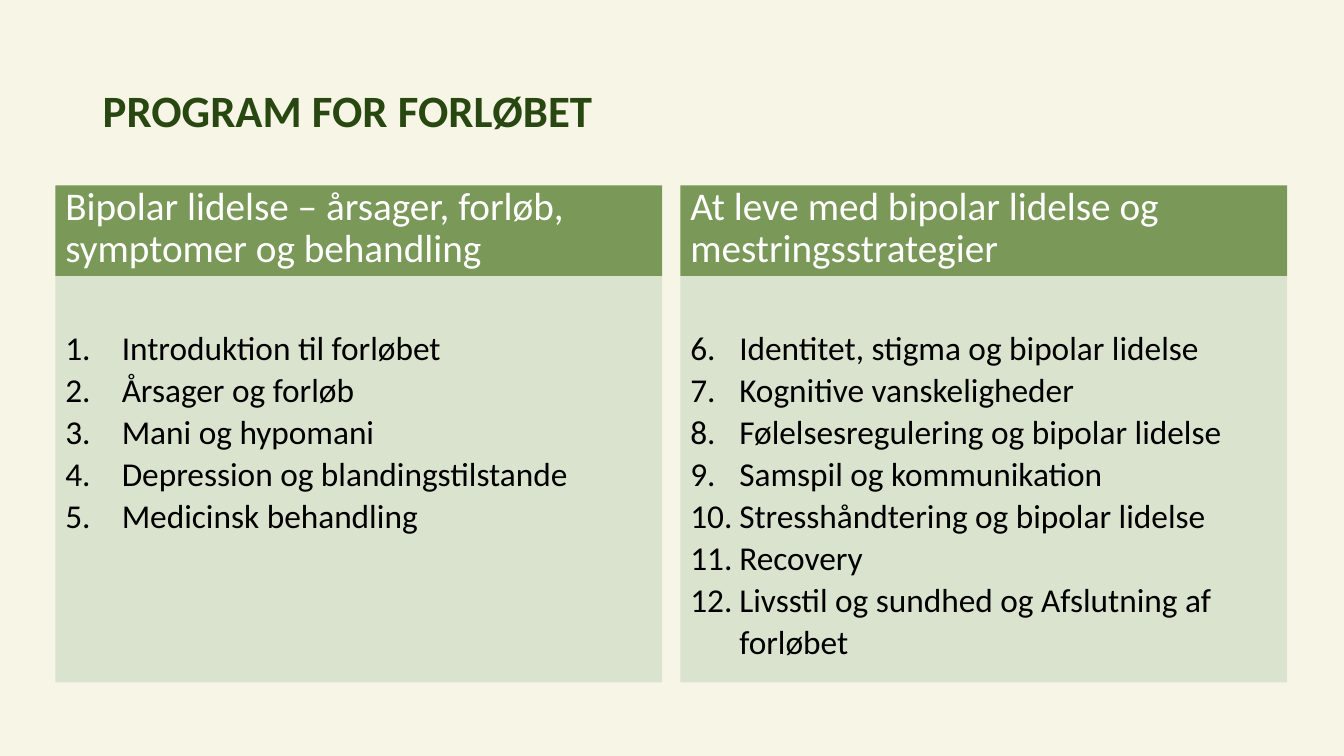
from dataclasses import dataclass

from lxml import etree
from pptx import Presentation
from pptx.dml.color import RGBColor
from pptx.enum import shapes, text
from pptx.oxml import ns
from pptx.util import Pt


@dataclass(frozen=True)
class Theme:
    """Colours, font and type sizes of the slide."""
    background: str = "F7F6E6"
    title: str = "294711"
    header: str = "7A9857"
    header_text: str = "FFFFFF"
    panel: str = "D9E3CE"
    session: str = "000000"
    font: str = "Calibri"
    title_size: float = 32
    header_size: float = 28
    session_size: float = 23.8


THEME = Theme()
HEADER_HEIGHT = 64.8

COLUMNS = [
    ("Bipolar lidelse – årsager, forløb, symptomer og behandling", 1, 40.3,
     ["Introduktion til forløbet", "Årsager og forløb", "Mani og hypomani",
      "Depression og blandingstilstande", "Medicinsk behandling"], None),
    ("At leve med bipolar lidelse og mestringsstrategier", 6, 35,
     ["Identitet, stigma og bipolar lidelse", "Kognitive vanskeligheder",
      "Følelsesregulering og bipolar lidelse", "Samspil og kommunikation",
      "Stresshåndtering og bipolar lidelse", "Recovery",
      "Livsstil og sundhed og Afslutning af"], "forløbet"),
]


def format_runs(paragraph, size, color, bold=False):
    """Apply font, size and colour to every run of a paragraph."""
    for run in paragraph.runs:
        run.font.name = THEME.font
        run.font.size = Pt(size)
        run.font.bold = bold
        run.font.color.rgb = RGBColor.from_string(color)


def add_panel(slide, left, top, width, height, fill, anchor, inset_top):
    """Add a plain filled rectangle and return its text frame."""
    panel = slide.shapes.add_shape(shapes.MSO_SHAPE.RECTANGLE,
                                   Pt(left), Pt(top), Pt(width), Pt(height))
    panel.shadow.inherit = False
    panel.fill.solid()
    panel.fill.fore_color.rgb = RGBColor.from_string(fill)
    panel.line.fill.background()
    frame = panel.text_frame
    frame.word_wrap = True
    frame.vertical_anchor = anchor
    frame.margin_top = Pt(inset_top)
    return frame


def indent_session(paragraph, indent, start=None):
    """Indent a session line and number it when a start number is given."""
    properties = paragraph._p.get_or_add_pPr()
    properties.set("marL", str(Pt(indent)))
    if start is not None:
        properties.set("indent", str(-Pt(indent)))
        etree.SubElement(properties, ns.qn("a:buAutoNum"),
                         type="arabicPeriod", startAt=str(start))


def add_title(slide, left, top, width, height):
    """Place and format the slide title."""
    title = slide.shapes.title
    title.left, title.top = Pt(left), Pt(top)
    title.width, title.height = Pt(width), Pt(height)
    frame = title.text_frame
    frame.text = "PROGRAM FOR FORLØBET"
    frame.vertical_anchor = text.MSO_ANCHOR.MIDDLE
    heading = frame.paragraphs[0]
    heading.alignment = text.PP_ALIGN.LEFT
    heading.line_spacing = 0.9
    format_runs(heading, THEME.title_size, THEME.title, bold=True)


def add_header(slide, left, top, width, height, theme_name):
    """Add the coloured heading of a programme column."""
    frame = add_panel(slide, left, top, width, height, THEME.header,
                      text.MSO_ANCHOR.BOTTOM, 0)
    frame.text = theme_name
    heading = frame.paragraphs[0]
    heading.alignment = text.PP_ALIGN.LEFT
    heading.line_spacing = 0.9
    format_runs(heading, THEME.header_size, THEME.header_text)


def add_sessions(slide, left, top, width, height, start, indent, sessions, continuation):
    """Add the numbered sessions and any unnumbered continuation line."""
    frame = add_panel(slide, left, top, width, height, THEME.panel,
                      text.MSO_ANCHOR.TOP, 43.9)
    lines = sessions + ([continuation] if continuation else [])
    frame.text = "\n".join(lines)
    for index, session in enumerate(frame.paragraphs):
        indent_session(session, indent, start if index < len(sessions) else None)
        session.alignment = text.PP_ALIGN.LEFT
        session.line_spacing = 0.7
        session.space_before = Pt(10 if index else 0)
        format_runs(session, THEME.session_size, THEME.session)


def add_column(slide, left, top, width, height, column):
    """Stack a header and its sessions inside the given box."""
    theme_name, start, indent, sessions, continuation = column
    add_header(slide, left, top, width, HEADER_HEIGHT, theme_name)
    add_sessions(slide, left, top + HEADER_HEIGHT, width, height - HEADER_HEIGHT,
                 start, indent, sessions, continuation)


def build_programme(slide):
    """Build the title and the two programme columns."""
    slide.background.fill.solid()
    slide.background.fill.fore_color.rgb = RGBColor.from_string(THEME.background)
    add_title(slide, 66.2, 28.8, 828, 104.4)
    column_width, gap = 433.4, 13
    for index, column in enumerate(COLUMNS):
        add_column(slide, 39.6 + index * (column_width + gap), 132.5,
                   column_width, 355, column)


def main():
    """Create and save the presentation."""
    presentation = Presentation()
    presentation.slide_width, presentation.slide_height = Pt(960), Pt(540)
    build_programme(presentation.slides.add_slide(presentation.slide_layouts[5]))
    presentation.save("out.pptx")


if __name__ == "__main__":
    main()
